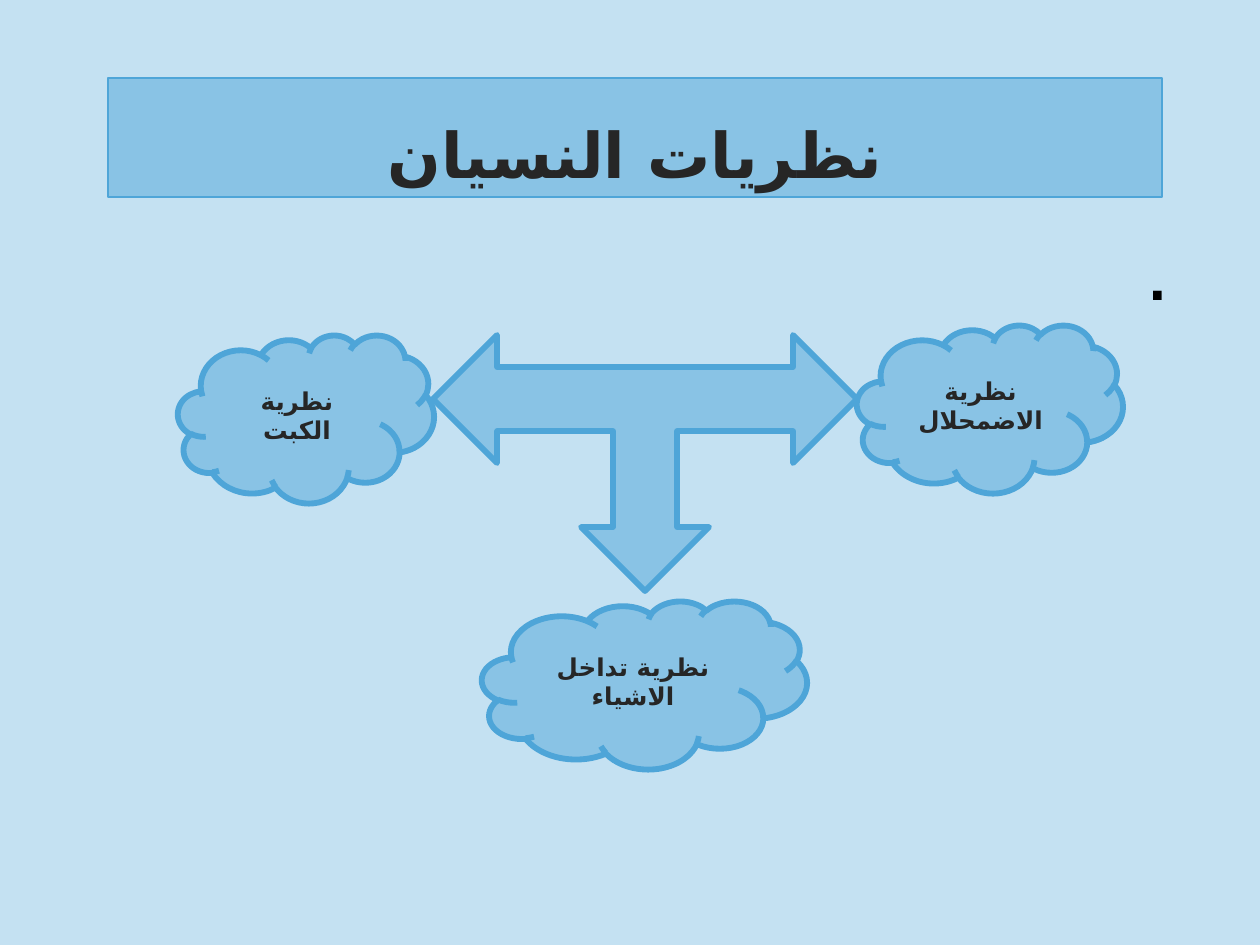
from lxml.etree import SubElement
from pptx import Presentation
from pptx.dml.color import RGBColor
from pptx.enum.shapes import MSO_SHAPE
from pptx.enum.text import MSO_ANCHOR, PP_ALIGN
from pptx.oxml.ns import qn
from pptx.util import Emu, Pt

PALE_BLUE = RGBColor(0xC4, 0xE1, 0xF2)
SKY_BLUE = RGBColor(0x89, 0xC3, 0xE5)
EDGE_BLUE = RGBColor(0x4E, 0xA5, 0xD8)
CHARCOAL = RGBColor(0x26, 0x26, 0x26)
BLACK = RGBColor(0, 0, 0)

FONT = "DejaVu Sans"
EMU_PER_PX = 914400 / 126


def px(length):
    return Emu(round(length * EMU_PER_PX))


def write(frame, text, size, color=CHARCOAL, bold=True,
          align=PP_ALIGN.CENTER, anchor=MSO_ANCHOR.MIDDLE):
    """Fill a text frame with one right-to-left paragraph."""
    frame.word_wrap = True
    frame.vertical_anchor = anchor
    paragraph = frame.paragraphs[0]
    paragraph.alignment = align
    paragraph.space_before = Pt(0)
    paragraph._p.get_or_add_pPr().set("rtl", "1")
    run = paragraph.add_run()
    run.text = text
    run.font.name = FONT
    run.font.size = Pt(size)
    run.font.bold = bold
    run.font.color.rgb = color
    SubElement(run._r.get_or_add_rPr(), qn("a:cs"), typeface=FONT)


class SlideBuilder:
    def __init__(self, presentation):
        self.slide = presentation.slides.add_slide(presentation.slide_layouts[5])
        background = self.slide.background.fill
        background.solid()
        background.fore_color.rgb = PALE_BLUE

    def paint(self, shape, line_width):
        shape.fill.solid()
        shape.fill.fore_color.rgb = SKY_BLUE
        shape.line.color.rgb = EDGE_BLUE
        shape.line.width = Pt(line_width)

    def title(self, text, left, top, width, height):
        heading = self.slide.shapes.title
        heading.left, heading.top = px(left), px(top)
        heading.width, heading.height = px(width), px(height)
        self.paint(heading, 0.75)
        write(heading.text_frame, text, 36, anchor=MSO_ANCHOR.BOTTOM)

    def body(self, text, left, top, width, height):
        frame = self.slide.shapes.add_textbox(
            px(left), px(top), px(width), px(height)).text_frame
        frame.margin_left, frame.margin_right = px(25), px(13)
        frame.margin_top, frame.margin_bottom = px(13), px(6)
        write(frame, text, 28, color=BLACK, align=PP_ALIGN.RIGHT,
              anchor=MSO_ANCHOR.TOP, bold=True)

    def outlined(self, preset, left, top, width, height):
        shape = self.slide.shapes.add_shape(
            preset, px(left), px(top), px(width), px(height))
        shape.shadow.inherit = False
        self.paint(shape, 3.35)
        return shape

    def three_way_arrow(self, *box):
        self.outlined(MSO_SHAPE.LEFT_RIGHT_UP_ARROW, *box).rotation = 180

    def cloud(self, text, *box):
        write(self.outlined(MSO_SHAPE.CLOUD, *box).text_frame, text, 14)


def main():
    presentation = Presentation()
    presentation.slide_width, presentation.slide_height = px(1260), px(945)

    builder = SlideBuilder(presentation)
    builder.title("نظريات النسيان", 108, 78, 1054, 119)
    builder.body(".", 78, 239, 1102, 578)
    builder.three_way_arrow(433, 335, 424, 256)
    cloud_height = 168
    for theory, left, top, width in (
        ("نظرية الاضمحلال", 857, 325, 266),
        ("نظرية الكبت", 178, 335, 256),
        ("نظرية تداخل الاشياء", 482, 601, 325),
    ):
        builder.cloud(theory, left, top, width, cloud_height)

    presentation.save("out.pptx")


if __name__ == "__main__":
    main()
